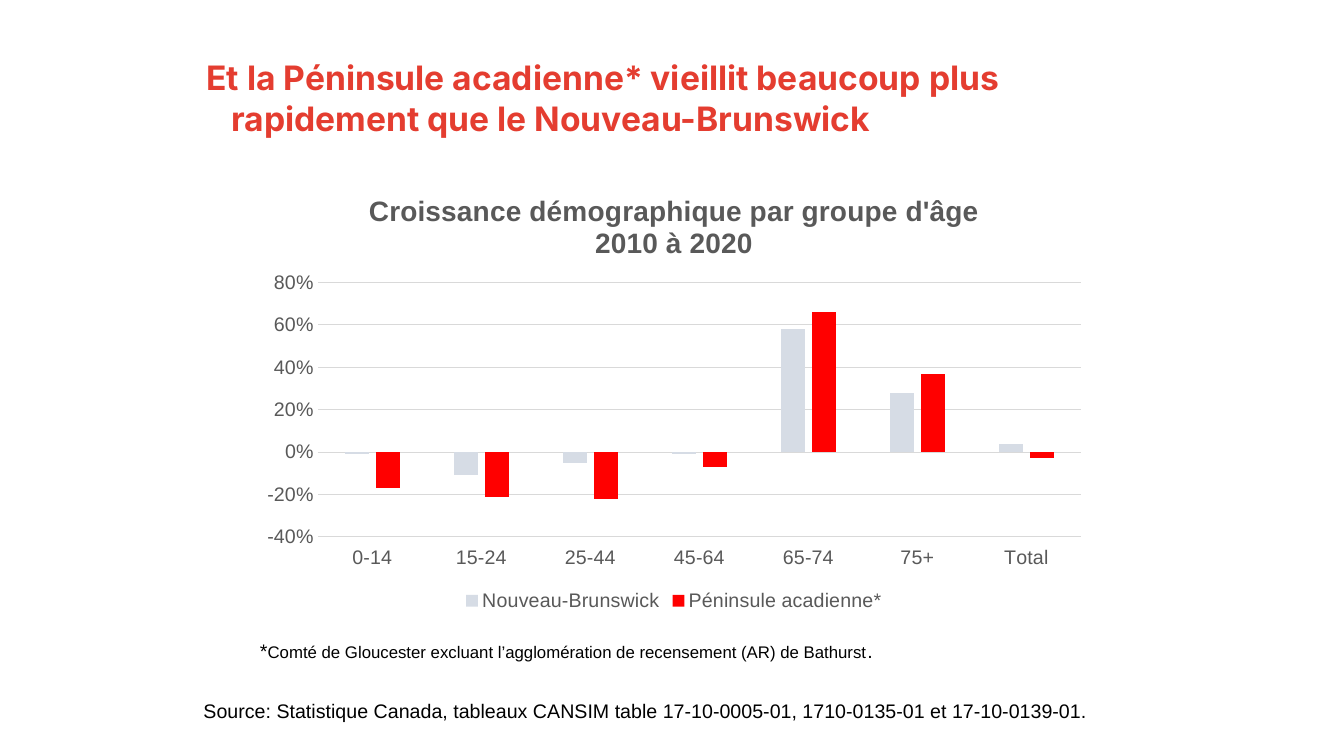
from lxml import etree
from pptx import Presentation
from pptx.chart.data import CategoryChartData
from pptx.dml.color import RGBColor
from pptx.enum.chart import XL_CHART_TYPE, XL_LEGEND_POSITION, XL_TICK_LABEL_POSITION, XL_TICK_MARK
from pptx.util import Inches, Pt

COLUMNS = XL_CHART_TYPE.COLUMN_CLUSTERED
LEGEND_BOTTOM = XL_LEGEND_POSITION.BOTTOM
LABELS_LOW = XL_TICK_LABEL_POSITION.LOW
NO_TICK = XL_TICK_MARK.NONE

COLORS = {"headline": "E43D30", "ink": "000000", "label": "595959", "grid": "D9D9D9",
          "province": "D6DCE5", "peninsula": "FF0000"}

HEADLINE = [("Et la Péninsule acadienne* vieillit beaucoup plus rapidement que le Nouveau-Brunswick", 24)]
FOOTNOTE = [("*", 14),
            ("Comté de Gloucester excluant l’agglomération de recensement (AR) de Bathurst", 12),
            (".", 14)]
SOURCE = [("Source: Statistique Canada, tableaux CANSIM table 17-10-0005-01, 1710-0135-01 et 17-10-0139-01.", 14)]

CHART_TITLE = ["Croissance démographique par groupe d'âge", "2010 à 2020"]
AGE_GROUPS = ["0-14", "15-24", "25-44", "45-64", "65-74", "75+", "Total"]
GROWTH = [
    ("Nouveau-Brunswick", "province", [-0.01, -0.11, -0.05, -0.01, 0.58, 0.28, 0.04]),
    ("Péninsule acadienne*", "peninsula", [-0.17, -0.21, -0.22, -0.07, 0.66, 0.37, -0.03]),
]
PLOT_LAYOUT = {"layoutTarget": "inner", "xMode": "edge", "yMode": "edge",
               "x": 0.08, "y": 0.24, "w": 0.9, "h": 0.58}


def rgb(name):
    return RGBColor.from_string(COLORS[name])


def style_font(font, size, color, name="Arial", bold=False):
    font.size = Pt(size)
    font.name = name
    font.bold = bold
    font.color.rgb = rgb(color)


def add_text(slide, runs, box, color="ink", font="Arial", bold=False, indent=0, hanging=0):
    frame = slide.shapes.add_textbox(*map(Inches, box)).text_frame
    frame.word_wrap = True
    paragraph = frame.paragraphs[0]
    if indent:
        properties = paragraph._p.get_or_add_pPr()
        properties.set("marL", str(Inches(indent)))
        properties.set("indent", str(-Inches(hanging)))
    for words, size in runs:
        run = paragraph.add_run()
        run.text = words
        style_font(run.font, size, color, font, bold)


def style_line(line):
    line.color.rgb = rgb("grid")
    line.width = Pt(0.75)


def place_plot(chart):
    plot_area = chart._chartSpace.chart.plotArea
    namespace = "{" + plot_area.nsmap["c"] + "}"
    for previous in plot_area.findall(namespace + "layout"):
        plot_area.remove(previous)
    layout = etree.Element(namespace + "layout")
    manual = etree.SubElement(layout, namespace + "manualLayout")
    for tag, value in PLOT_LAYOUT.items():
        etree.SubElement(manual, namespace + tag).set("val", str(value))
    plot_area.insert(0, layout)


def add_growth_chart(slide, box):
    data = CategoryChartData(number_format="0%")
    data.categories = AGE_GROUPS
    for name, _, values in GROWTH:
        data.add_series(name, values)
    chart = slide.shapes.add_chart(COLUMNS, *map(Inches, box), data).chart
    style_font(chart.font, 14, "label")

    title = chart.chart_title
    title.include_text_frame = True
    title.text_frame.text = "\n".join(CHART_TITLE)
    for paragraph in title.text_frame.paragraphs:
        style_font(paragraph.runs[0].font, 20, "label", bold=True)

    chart.has_legend = True
    chart.legend.position = LEGEND_BOTTOM
    chart.legend.include_in_layout = False
    style_font(chart.legend.font, 14, "label")

    ages, percent = chart.category_axis, chart.value_axis
    for axis in (ages, percent):
        axis.major_tick_mark = axis.minor_tick_mark = NO_TICK
        style_font(axis.tick_labels.font, 14, "label")
    ages.tick_label_position = LABELS_LOW
    style_line(ages.format.line)
    percent.minimum_scale, percent.maximum_scale, percent.major_unit = -0.4, 0.8, 0.2
    percent.tick_labels.number_format = "0%"
    percent.tick_labels.number_format_is_linked = False
    percent.format.line.fill.background()
    style_line(percent.major_gridlines.format.line)

    plot = chart.plots[0]
    plot.gap_width, plot.overlap, plot.vary_by_categories = 219, -27, False
    for series, (_, color, _) in zip(plot.series, GROWTH):
        series.invert_if_negative = False
        series.format.fill.solid()
        series.format.fill.fore_color.rgb = rgb(color)
    place_plot(chart)


def main():
    """Build the slide on population growth by age group."""
    deck = Presentation()
    deck.slide_width, deck.slide_height = Inches(13.33), Inches(7.5)
    slide = deck.slides.add_slide(deck.slide_layouts[6])
    add_text(slide, HEADLINE, (1.7, 0.52, 9.71, 1.55), color="headline", font="Inter",
             bold=True, indent=0.5, hanging=0.25)
    add_growth_chart(slide, (2.48, 1.76, 8.41, 4.35))
    add_text(slide, FOOTNOTE, (2.48, 6.29, 8.19, 0.34))
    add_text(slide, SOURCE, (1.92, 6.88, 9.36, 0.34))
    deck.save("out.pptx")


if __name__ == "__main__":
    main()
